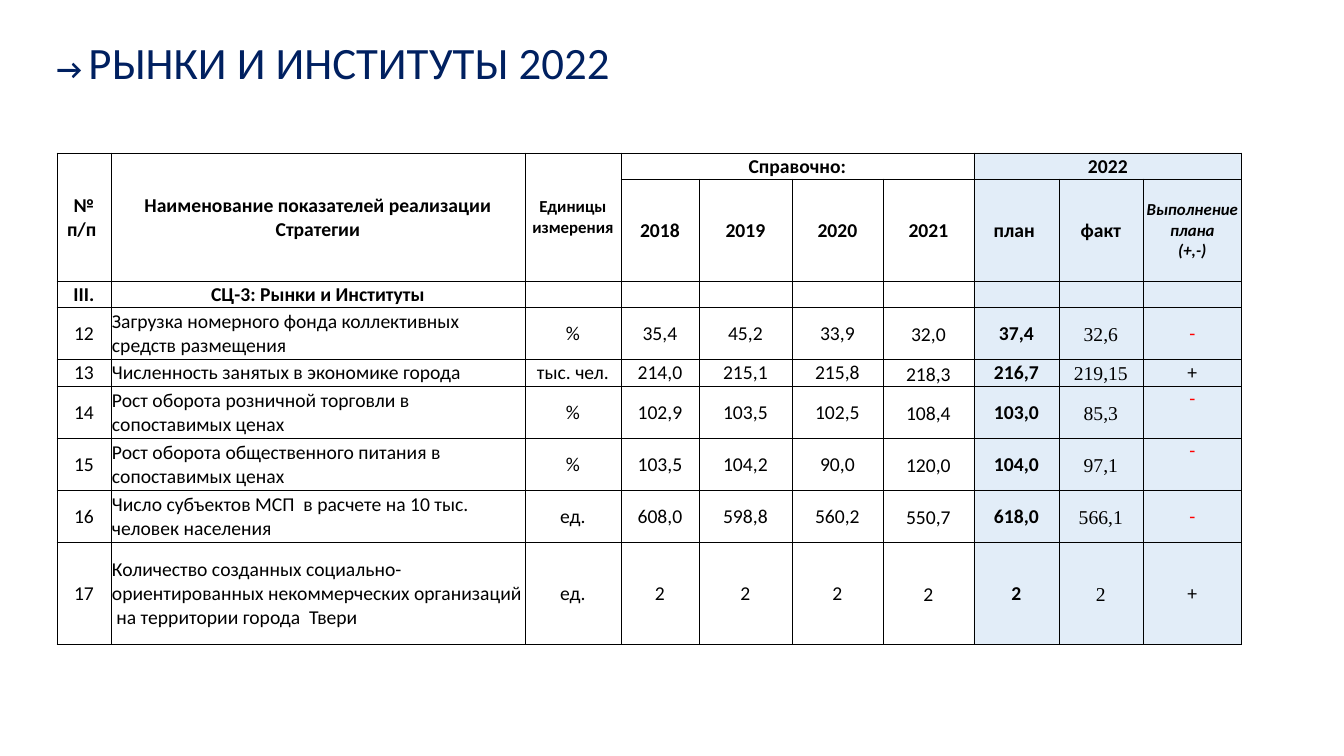
from lxml import etree
from pptx import Presentation
from pptx.dml.color import RGBColor
from pptx.enum.text import MSO_ANCHOR, PP_ALIGN
from pptx.oxml.ns import qn
from pptx.util import Pt

LEFT, CENTER = PP_ALIGN.LEFT, PP_ALIGN.CENTER
TOP, MIDDLE = MSO_ANCHOR.TOP, MSO_ANCHOR.MIDDLE

COLORS = {"navy": "002060", "black": "000000", "red": "FF0000",
          "white": "FFFFFF", "tint": "DEEBF7"}
TITLE = [("→ ", 20, True), ("РЫНКИ И ИНСТИТУТЫ 2022", 32, False)]
ROWS = [
    ("№ п/п ", "Наименование показателей реализации Стратегии", "Единицы измерения",
     "Справочно:", "", "", "", "2022", "", ""),
    ("", "", "", "2018", "2019", "2020", "2021", "план ", "факт",
     "Выполнение плана\n(+,-)"),
    ("III.", "СЦ-3: Рынки и Институты", "", "", "", "", "", "", "", ""),
    ("12", "Загрузка номерного фонда коллективных средств размещения", "%",
     "35,4", "45,2", "33,9", "32,0", "37,4", "32,6", "-"),
    ("13", "Численность занятых в экономике города", "тыс. чел.",
     "214,0", "215,1", "215,8", "218,3", "216,7", "219,15", "+"),
    ("14", "Рост оборота розничной торговли в сопоставимых ценах", "%",
     "102,9", "103,5", "102,5", "108,4", "103,0", "85,3", "-"),
    ("15", "Рост оборота общественного питания в сопоставимых ценах", "%",
     "103,5", "104,2", "90,0", "120,0", "104,0", "97,1", "-"),
    ("16", "Число субъектов МСП  в расчете на 10 тыс. человек населения", "ед.",
     "608,0", "598,8", "560,2", "550,7", "618,0", "566,1", "-"),
    ("17", "Количество созданных социально-ориентированных некоммерческих "
     "организаций  на территории города  Твери", "ед.",
     "2", "2", "2", "2", "2", "2", "+"),
]
COL_WIDTHS = [54, 414, 96, 78, 93, 91, 91, 85, 84, 99]
ROW_HEIGHTS = [26, 102, 26, 52, 26, 52, 52, 52, 102]
MERGES = [(0, 0, 1, 0), (0, 1, 1, 1), (0, 2, 1, 2), (0, 3, 0, 6), (0, 7, 0, 9)]
HEADER_ROWS = 3
NAME, UNIT, LAST_YEAR, PLAN, FACT, RESULT = 1, 2, 6, 7, 8, 9
TOP_RESULTS = ("14", "15")


def px(n):
    return round(n * 914400 / 100.8)


def add_run(p, text, size=14, bold=False, italic=False, color="black", font="Calibri"):
    r = p.add_run()
    r.text = text
    f = r.font
    f.size, f.bold, f.italic, f.name = Pt(size), bold, italic, font
    f.color.rgb = RGBColor.from_string(COLORS[color])


def write_cell(cell, text, align=CENTER, spacing=None, **fmt):
    tf = cell.text_frame
    for i, line in enumerate(text.split("\n")):
        p = tf.add_paragraph() if i else tf.paragraphs[0]
        p.alignment = align
        if spacing:
            p.line_spacing = spacing
        if line:
            add_run(p, line, **fmt)
        else:
            etree.SubElement(p._p, qn("a:endParaRPr"), sz="1400")


def paint_cell(cell, color, alpha=None):
    cell.fill.solid()
    cell.fill.fore_color.rgb = RGBColor.from_string(COLORS[color])
    tc_pr = cell._tc.get_or_add_tcPr()
    if alpha:
        clr = tc_pr.find(".//" + qn("a:srgbClr"))
        etree.SubElement(clr, qn("a:alpha"), val=str(alpha * 1000))
    for i, side in enumerate(("lnL", "lnR", "lnT", "lnB")):
        ln = etree.Element(qn("a:" + side), w=str(Pt(0.5)))
        fill = etree.SubElement(ln, qn("a:solidFill"))
        etree.SubElement(fill, qn("a:srgbClr"), val=COLORS["black"])
        tc_pr.insert(i, ln)


def cell_format(row, col, text):
    """Text format that follows from the place of a cell in the table."""
    if row < HEADER_ROWS:
        small = row < 2 and (col == UNIT or col == RESULT)
        return {"bold": True, "size": 12 if small else 14,
                "italic": row == 1 and col == RESULT}
    return {"align": LEFT if col == NAME else CENTER,
            "spacing": 1.15 if col in (LAST_YEAR, FACT) else None,
            "bold": col == PLAN,
            "font": "Times New Roman" if col == FACT else "Calibri",
            "color": "red" if text == "-" else "black"}


prs = Presentation()
prs.slide_width, prs.slide_height = px(1344), px(756)
s = prs.slides.add_slide(prs.slide_layouts[6])

tf = s.shapes.add_textbox(px(44), px(30), px(579), px(65)).text_frame
tf.word_wrap = False
tf.paragraphs[0].alignment = CENTER
for text, size, bold in TITLE:
    add_run(tf.paragraphs[0], text, size=size, bold=bold, color="navy")

table = s.shapes.add_table(len(ROWS), len(COL_WIDTHS), px(57), px(153),
                           px(sum(COL_WIDTHS)), px(sum(ROW_HEIGHTS))).table
table.first_row = table.horz_banding = False
for column, width in zip(table.columns, COL_WIDTHS):
    column.width = px(width)
for row, height in zip(table.rows, ROW_HEIGHTS):
    row.height = px(height)

for i, values in enumerate(ROWS):
    for j, text in enumerate(values):
        cell = table.cell(i, j)
        wide = i >= HEADER_ROWS and j in (LAST_YEAR, FACT)
        cell.margin_left = cell.margin_right = px(7 if wide else 1)
        cell.margin_top, cell.margin_bottom = px(0 if wide else 1), 0
        at_top = j == RESULT and values[0] in TOP_RESULTS
        cell.vertical_anchor = TOP if at_top else MIDDLE
        write_cell(cell, text, **cell_format(i, j, text))
        if j >= PLAN:
            paint_cell(cell, "tint", alpha=85)
        else:
            paint_cell(cell, "white")

for top, left, bottom, right in MERGES:
    table.cell(top, left).merge(table.cell(bottom, right))

prs.save("out.pptx")
